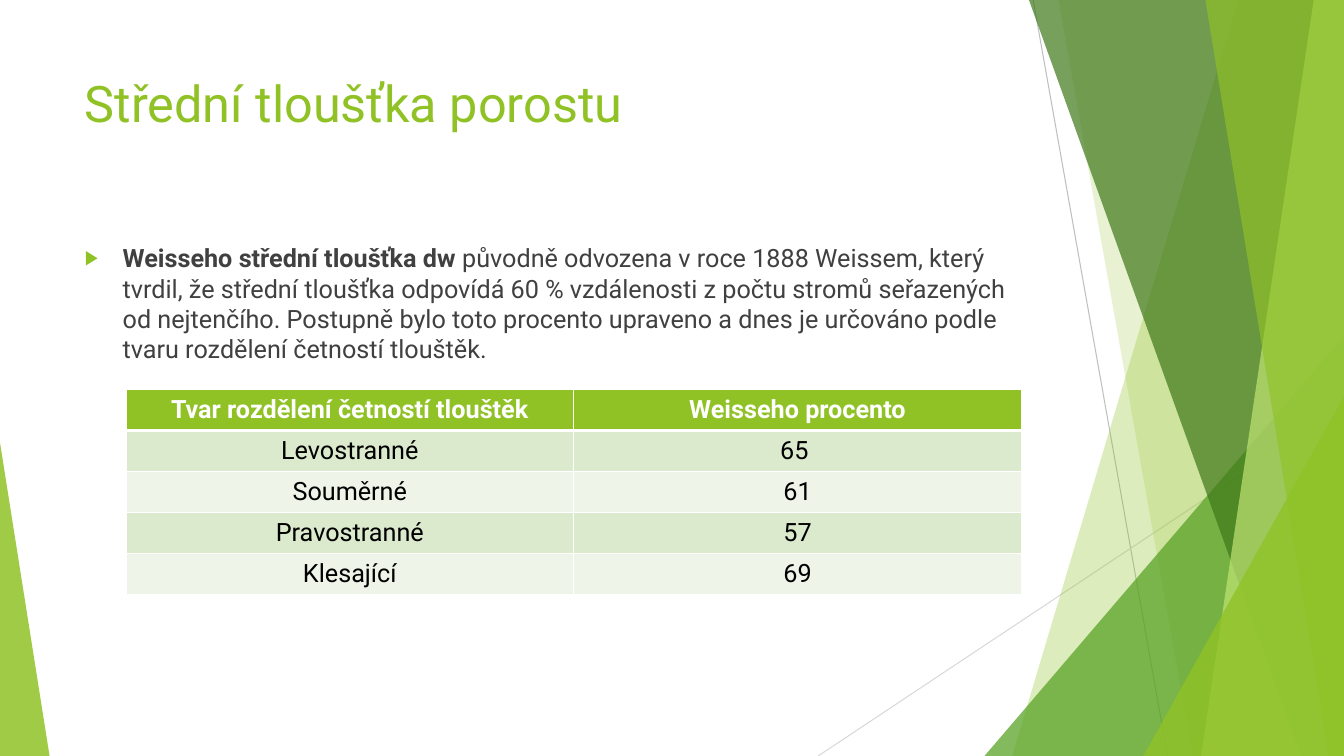
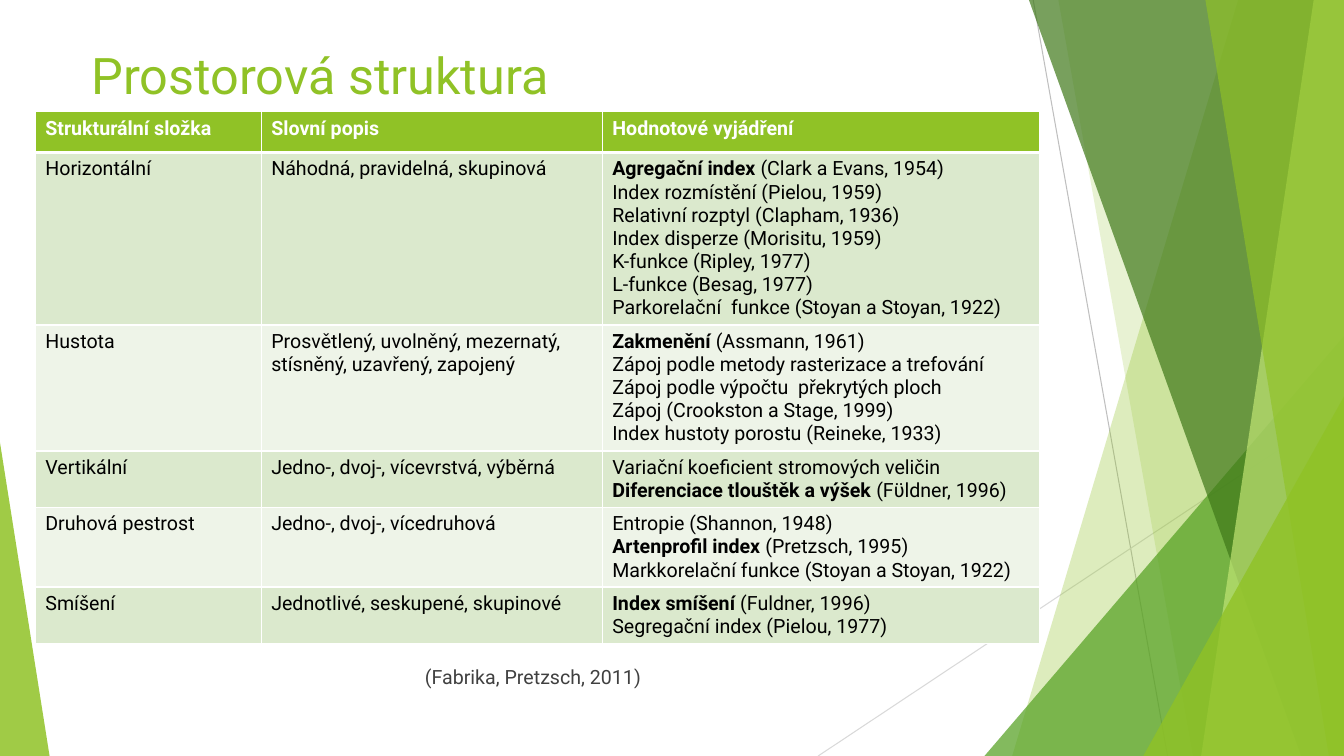
from lxml.etree import SubElement
from pptx import Presentation
from pptx.dml.color import RGBColor
from pptx.enum.shapes import MSO_CONNECTOR as CONN, MSO_SHAPE as SHAPE
from pptx.enum.text import MSO_ANCHOR as ANCHOR, MSO_AUTO_SIZE as FIT, PP_ALIGN as ALIGN
from pptx.oxml.ns import qn
from pptx.util import Emu, Pt

CELL = 76200
COLS, ROWS = 160, 90
FONT = "Roboto"
GREEN, MID, DARK, PALE = "90C226", "54A021", "3F7819", "C0E474"
TEXT, BLACK, WHITE = "404040", "000000", "FFFFFF"
BANDS = ("DBE9CD", "EEF4E8")
TABLE_ROW = 4.87
TITLE_SIZE = (112.8, 17.3)

RAYS = [
    (123, 0, 139, ROWS, "BFBFBF"),
    (COLS, 48.4, 97.4, ROWS, "D9D9D9"),
]
FACETS = [
    ("band", (147.4, 120.5), GREEN, 30),
    ("band", (126, 142), GREEN, 20),
    ("corner", (117.2, 40, 42.8, 50, 1), MID, 72),
    ("band", (122.5, 154.9), DARK, 70),
    ("band", (156.4, 143), PALE, 70),
    ("band", (143.5, 158.2), GREEN, 65),
    ("corner", (136.1, 47.2, 23.9, 42.8, 1), GREEN, 80),
    ("corner", (0, 52.7, 5.9, 37.3, 0), GREEN, 85),
]

WEISSE_TEXT = (
    "*Weisseho střední tloušťka dw* původně odvozena v roce 1888 Weissem, který "
    "tvrdil, že střední tloušťka odpovídá 60 % vzdálenosti z počtu stromů "
    "seřazených od nejtenčího. Postupně bylo toto procento upraveno a dnes je "
    "určováno podle tvaru rozdělení četností tlouštěk."
)
WEISSE_ROWS = [
    ("Tvar rozdělení četností tlouštěk", "Weisseho procento"),
    ("Levostranné", "65 "),
    ("Souměrné", "61"),
    ("Pravostranné", "57"),
    ("Klesající", "69"),
]
STRUCTURE_ROWS = [
    ("Strukturální složka", "Slovní popis", "Hodnotové vyjádření"),
    ("Horizontální", "Náhodná, pravidelná, skupinová",
     "*Agregační index *(Clark a Evans, 1954)\n"
     "Index rozmístění (Pielou, 1959)\n"
     "Relativní rozptyl (Clapham, 1936)\n"
     "Index disperze (Morisitu, 1959)\n"
     "K-funkce (Ripley, 1977)\n"
     "L-funkce (Besag, 1977)\n"
     "Parkorelační  funkce (Stoyan a Stoyan, 1922)"),
    ("Hustota", "Prosvětlený, uvolněný, mezernatý, stísněný, uzavřený, zapojený",
     "*Zakmenění* (Assmann, 1961)\n"
     "Zápoj podle metody rasterizace a trefování\n"
     "Zápoj podle výpočtu  překrytých ploch\n"
     "Zápoj (Crookston a Stage, 1999)\n"
     "Index hustoty porostu (Reineke, 1933)"),
    ("Vertikální", "Jedno-, dvoj-, vícevrstvá, výběrná",
     "Variační koeficient stromových veličin\n"
     "*Diferenciace tlouštěk a výšek *(Fϋldner, 1996)"),
    ("Druhová pestrost", "Jedno-, dvoj-, vícedruhová",
     "Entropie (Shannon, 1948)\n"
     "*Artenprofil index *(Pretzsch, 1995)\n"
     "Markkorelační funkce (Stoyan a Stoyan, 1922)"),
    ("Smíšení", "Jednotlivé, seskupené, skupinové",
     "*Index smíšení *(Fuldner, 1996)\n"
     "Segregační index (Pielou, 1977)"),
]


def rgb(color):
    """Turn a hex string into a colour."""
    return RGBColor.from_string(color)


def grid(*cells):
    """Turn grid cells into lengths."""
    return [Emu(round(c * CELL)) for c in cells]


def place(sp, box):
    """Move a shape to a box on the grid."""
    sp.left, sp.top, sp.width, sp.height = grid(*box)


def write(tf, text, size, color, bold=False, align=ALIGN.LEFT):
    """Write lines as paragraphs, with bold runs between asterisks."""
    for i, line in enumerate(text.split("\n")):
        p = tf.add_paragraph() if i else tf.paragraphs[0]
        p.alignment = align
        for j, part in enumerate(line.split("*")):
            if part:
                r = p.add_run()
                r.text = part
                r.font.name, r.font.size = FONT, Pt(size)
                r.font.bold = bold or j % 2 == 1
                r.font.color.rgb = rgb(color)


def set_frame(tf):
    """Make a text frame wrap from the top at a fixed size."""
    tf.word_wrap = True
    tf.auto_size = FIT.NONE
    tf.vertical_anchor = ANCHOR.TOP


def add_ray(shapes, x1, y1, x2, y2, color):
    """Draw one thin line."""
    c = shapes.add_connector(CONN.STRAIGHT, *grid(x1, y1, x2, y2))
    c.line.color.rgb = rgb(color)
    c.line.width = Pt(0.75)
    SubElement(c.element.spPr, qn("a:effectLst"))
    return c


def add_facet(shapes, kind, geometry, color, opacity):
    """Draw one translucent band or corner triangle."""
    if kind == "band":
        top, bottom = geometry
        outline = [(COLS, 0), (COLS, ROWS), (bottom, ROWS)]
        fb = shapes.build_freeform(*grid(top, 0), scale=1.0)
        fb.add_line_segments([grid(*pt) for pt in outline], close=True)
        sp = fb.convert_to_shape()
    else:
        *box, apex = geometry
        sp = shapes.add_shape(SHAPE.ISOSCELES_TRIANGLE, *grid(*box))
        sp.adjustments[0] = apex
    sp.shadow.inherit = False
    sp.line.fill.background()
    sp.fill.solid()
    sp.fill.fore_color.rgb = rgb(color)
    tint = sp.element.xpath("./p:spPr/a:solidFill/a:srgbClr")[0]
    SubElement(tint, qn("a:alpha"), val=str(opacity * 1000))
    return sp


def decorate_master(prs, s):
    """Draw the backdrop on a slide and move it to the master."""
    parts = [add_ray(s.shapes, *ray) for ray in RAYS]
    parts += [add_facet(s.shapes, *facet) for facet in FACETS]
    tree = prs.slide_master.shapes.element
    for n, sp in enumerate(parts):
        sp.element.xpath(".//p:cNvPr")[0].set("id", str(100 + n))
        tree.insert(2 + n, sp.element)


def set_title(s, text, x, y):
    """Place and write the title."""
    title = s.shapes.title
    place(title, (x, y, *TITLE_SIZE))
    set_frame(title.text_frame)
    write(title.text_frame, text, 36, GREEN)


def set_body(s, text, box, indent=4.5):
    """Place the body and write it with an arrow bullet."""
    body = s.placeholders[1]
    place(body, box)
    tf = body.text_frame
    set_frame(tf)
    write(tf, text, 18, TEXT)
    for p in tf.paragraphs:
        p.space_before = Pt(10)
        ppr = p._p.get_or_add_pPr()
        hang = grid(indent)[0]
        ppr.set("marL", str(hang))
        ppr.set("indent", str(-hang))
        SubElement(SubElement(ppr, qn("a:buClr")), qn("a:srgbClr"), val=GREEN)
        SubElement(ppr, qn("a:buSzPct"), val="80000")
        SubElement(ppr, qn("a:buFont"), typeface=FONT)
        SubElement(ppr, qn("a:buChar"), char="▶")


def set_borders(cell, row):
    """Draw white cell borders, thick under the header."""
    tcpr = cell._tc.get_or_add_tcPr()
    widths = {"lnL": 1, "lnR": 1, "lnT": 3 if row == 1 else 1, "lnB": 1 if row else 3}
    for side, width in widths.items():
        ln = SubElement(tcpr, qn("a:" + side), w=str(Pt(width)))
        SubElement(SubElement(ln, qn("a:solidFill")), qn("a:srgbClr"), val=WHITE)


def add_grid_table(s, x, y, widths, rows, size, align=ALIGN.LEFT, anchor=ANCHOR.TOP):
    """Add a banded table with a green header."""
    box = grid(x, y, sum(widths), TABLE_ROW * len(rows))
    table = s.shapes.add_table(len(rows), len(widths), *box).table
    table.horz_banding = False
    for col, width in zip(table.columns, grid(*widths)):
        col.width = width
    for i, texts in enumerate(rows):
        table.rows[i].height = grid(TABLE_ROW)[0]
        for j, text in enumerate(texts):
            cell = table.cell(i, j)
            set_borders(cell, i)
            cell.fill.solid()
            cell.fill.fore_color.rgb = rgb(BANDS[(i - 1) % 2] if i else GREEN)
            cell.vertical_anchor = anchor
            write(cell.text_frame, text, size, BLACK if i else WHITE, i == 0, align)


def add_credit(s, text, box):
    """Add the citation under a table."""
    tf = s.shapes.add_textbox(*grid(*box)).text_frame
    set_frame(tf)
    write(tf, text, 14, TEXT)
    tf.paragraphs[0].space_before = Pt(10)


def fill_diameter_slide(s):
    """Fill the slide on the mean diameter."""
    set_title(s, "Střední tloušťka porostu", 8.9, 8)
    set_body(s, WEISSE_TEXT, (8.9, 28.3, 112.8, 50.9))
    add_grid_table(s, 15, 46.4, (53.3, 53.3), WEISSE_ROWS, 18, ALIGN.CENTER, ANCHOR.MIDDLE)


def fill_structure_slide(s):
    """Fill the slide on spatial structure."""
    set_title(s, "Prostorová struktura", 9.7, 4.7)
    add_grid_table(s, 4.2, 13.3, (26.9, 40.6, 52.1), STRUCTURE_ROWS, 14)
    add_credit(s, "(Fabrika, Pretzsch, 2011)", (49.4, 78.6, 29.3, 4.2))


def main():
    """Build and save the presentation."""
    prs = Presentation()
    prs.slide_width, prs.slide_height = grid(COLS, ROWS)
    diameter = prs.slides.add_slide(prs.slide_layouts[1])
    decorate_master(prs, diameter)
    fill_diameter_slide(diameter)
    fill_structure_slide(prs.slides.add_slide(prs.slide_layouts[5]))
    prs.save("out.pptx")


if __name__ == "__main__":
    main()
